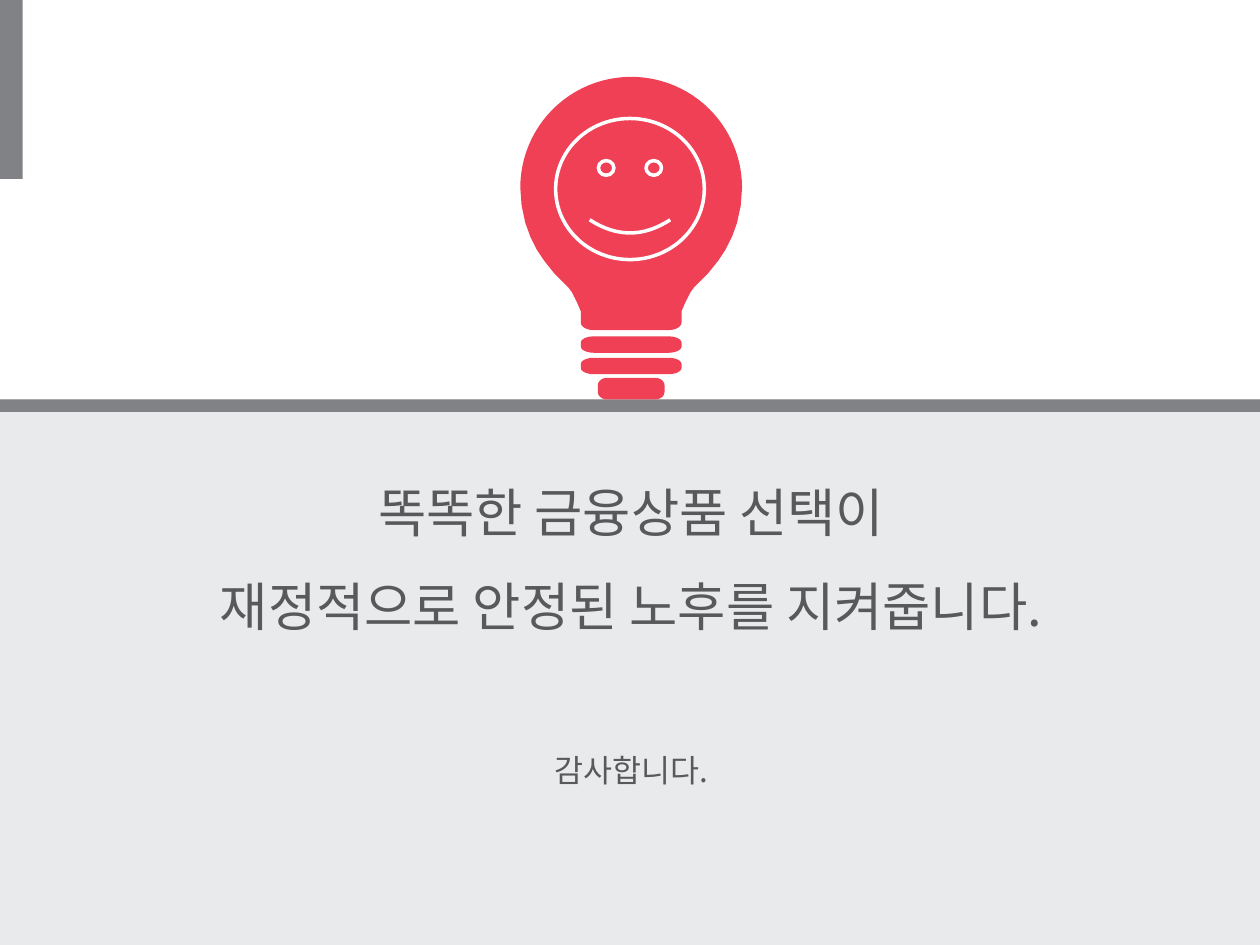
import math

import pptx
import pptx.dml.color
import pptx.enum.shapes
import pptx.enum.text
import pptx.util
from lxml import etree
from pptx.oxml.ns import qn
from pptx.util import Inches

FONT = "Noto Sans CJK KR"
RED, GREY, PALE, INK, WHITE = "EF4056", "808285", "E8EAEB", "58595B", "FFFFFF"
SHAPE = pptx.enum.shapes.MSO_SHAPE


def rgb(value):
    return pptx.dml.color.RGBColor.from_string(value)


def fill_plain(sp, color):
    sp.shadow.inherit = False
    sp.fill.solid()
    sp.fill.fore_color.rgb = rgb(color)
    sp.line.fill.background()


def add_bar(s, left, top, width, height, color):
    sp = s.shapes.add_shape(SHAPE.RECTANGLE, Inches(left), Inches(top),
                            Inches(width), Inches(height))
    fill_plain(sp, color)


def arc(cx, cy, rx, ry, start, end, steps):
    """Points on an ellipse; 0 degrees is up and 90 degrees is right."""
    angles = [math.radians(start + (end - start) * i / steps) for i in range(steps + 1)]
    return [(cx + rx * math.sin(a), cy - ry * math.cos(a)) for a in angles]


def add_symmetric(s, cx, top, half, color):
    """Mirror a right half outline about the vertical line at cx."""
    outline = half + [(-x, y) for x, y in reversed(half)]
    points = [(Inches(cx + x), Inches(top + y)) for x, y in outline]
    builder = s.shapes.build_freeform(*points[0], scale=1.0)
    builder.add_line_segments(points[1:], close=True)
    fill_plain(builder.convert_to_shape(), color)


def cap_half(width, height, rx, ry):
    x = width / 2 - rx
    return arc(x, ry, rx, ry, 0, 90, 6) + arc(x, height - ry, rx, ry, 90, 180, 6)


def add_bulb(s, left, top, width):
    cx, radius = left + width / 2, width / 2
    # Glass and neck
    glass = arc(0, radius, radius, radius, 0, 90, 24)
    side = [(0.87, 1.02), (0.84, 1.16), (0.8, 1.27), (0.75, 1.37), (0.69, 1.46),
            (0.61, 1.56), (0.5, 1.67), (0.47, 1.71), (0.43, 1.79), (0.4, 1.86)]
    neck = arc(0.3, 1.95, 0.1, 0.06, 90, 180, 6)
    add_symmetric(s, cx, top, glass + side + neck, RED)
    # Screw rings and foot
    for offset in (2.06, 2.23):
        add_symmetric(s, cx, top + offset, cap_half(0.8, 0.13, 0.1, 0.05), RED)
    add_symmetric(s, cx, top + 2.39, cap_half(0.53, 0.17, 0.07, 0.06), RED)


def add_face(s, left, top, width, height):
    sp = s.shapes.add_shape(SHAPE.SMILEY_FACE, Inches(left), Inches(top),
                            Inches(width), Inches(height))
    sp.shadow.inherit = False
    sp.fill.background()
    sp.line.color.rgb = rgb(WHITE)
    sp.line.width = pptx.util.Pt(2)


def add_message(s, left, top, width, height):
    tf = s.shapes.add_textbox(Inches(left), Inches(top),
                              Inches(width), Inches(height)).text_frame
    tf.word_wrap = True
    lines = [("똑똑한 금융상품 선택이", 30, 0),
             ("재정적으로 안정된 노후를 지켜줍니다.", 30, 0),
             ("감사합니다.", 18, 54)]
    for i, (text, size, before) in enumerate(lines):
        p = tf.add_paragraph() if i else tf.paragraphs[0]
        p.text = text
        p.alignment = pptx.enum.text.PP_ALIGN.CENTER
        p.line_spacing = 1.5
        p.space_before = pptx.util.Pt(before)
        p.font.size = pptx.util.Pt(size)
        p.font.color.rgb = rgb(INK)
        p.font.name = FONT
        # East Asian typeface for the Korean text
        props = p._p.pPr.find(qn("a:defRPr"))
        etree.SubElement(props, qn("a:ea")).set("typeface", FONT)


def add_backdrop(s, width, height, horizon):
    add_bar(s, 0, horizon, width, height - horizon, PALE)
    add_bar(s, 0, horizon, width, 0.1, GREY)
    add_bar(s, 0, 0, 0.18, 1.42, GREY)


def main():
    prs = pptx.Presentation()
    prs.slide_width, prs.slide_height = Inches(10), Inches(7.5)
    s = prs.slides.add_slide(prs.slide_layouts[6])
    add_backdrop(s, 10, 7.5, 3.17)
    add_bulb(s, 4.13, 0.61, 1.76)
    add_message(s, 0.64, 3.51, 8.74, 2.83)
    add_face(s, 4.41, 0.94, 1.18, 1.12)
    prs.save("out.pptx")


if __name__ == "__main__":
    main()
